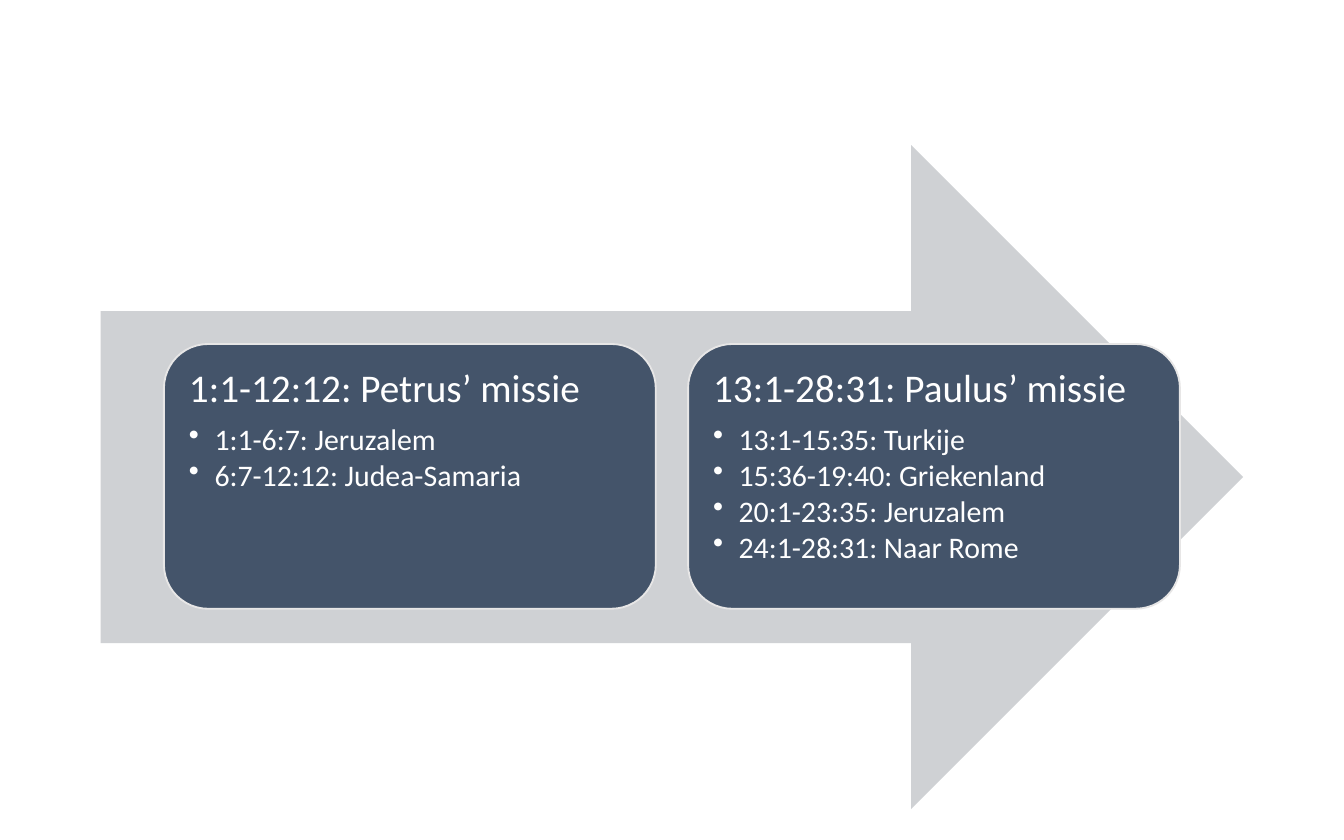
from dataclasses import dataclass

from lxml.etree import SubElement
from pptx import Presentation
from pptx.dml.color import RGBColor
from pptx.enum.shapes import MSO_SHAPE
from pptx.enum.text import MSO_ANCHOR, PP_ALIGN
from pptx.oxml.ns import qn
from pptx.shapes.autoshape import Shape
from pptx.slide import Slide
from pptx.util import Inches, Pt

GREY = RGBColor(0xCF, 0xD1, 0xD4)
NAVY = RGBColor(0x44, 0x54, 0x6A)
PALE = RGBColor(0xE7, 0xE6, 0xE6)
WHITE = RGBColor(0xFF, 0xFF, 0xFF)

LEFT, STEP = 1.22, 3.9
FRAME = {
    "word_wrap": True,
    "vertical_anchor": MSO_ANCHOR.TOP,
    "margin_left": Inches(0.09),
    "margin_right": Inches(0.09),
    "margin_top": Inches(0.09),
    "margin_bottom": Inches(0.09),
}
HEAD = {"alignment": PP_ALIGN.LEFT, "line_spacing": 0.9, "space_after": Pt(7)}
ITEM = HEAD | {"space_after": Pt(2), "level": 1}


@dataclass
class Card:
    title: str
    items: list[str]


CARDS = [
    Card("1:1-12:12: Petrus’ missie", ["1:1-6:7: Jeruzalem", "6:7-12:12: Judea-Samaria"]),
    Card(
        "13:1-28:31: Paulus’ missie",
        [
            "13:1-15:35: Turkije",
            "15:36-19:40: Griekenland",
            "20:1-23:35: Jeruzalem",
            "24:1-28:31: Naar Rome",
        ],
    ),
]


def apply(target: object, values: dict) -> None:
    """Set each named value on the target."""
    for name, value in values.items():
        setattr(target, name, value)


def add_form(slide: Slide, kind: MSO_SHAPE, box: tuple, fill: RGBColor) -> Shape:
    """Add a flat filled shape without an outline."""
    form = slide.shapes.add_shape(kind, *map(Inches, box))
    form.shadow.inherit = False
    form.fill.solid()
    form.fill.fore_color.rgb = fill
    form.line.fill.background()
    return form


def add_card(slide: Slide, card: Card, left: float) -> None:
    """Add a rounded card with a title and bullets."""
    form = add_form(slide, MSO_SHAPE.ROUNDED_RECTANGLE, (left, 2.56, 3.66, 1.97), NAVY)
    form.line.color.rgb = PALE
    form.line.width = Pt(1)
    frame = form.text_frame
    apply(frame, FRAME)
    frame.text = "\n".join([card.title, *card.items])
    for rank, para in enumerate(frame.paragraphs):
        apply(para, ITEM if rank else HEAD)
        apply(para.runs[0].font, {"name": "Calibri", "size": Pt(16 if rank else 21)})
        para.runs[0].font.color.rgb = WHITE
        if rank:
            props = para._p.get_or_add_pPr()
            props.set("marL", str(Inches(0.19)))
            props.set("indent", str(-Inches(0.19)))
            SubElement(props, qn("a:buChar")).set("char", "•")


def main() -> None:
    """Build the slide and save it."""
    deck = Presentation()
    apply(deck, {"slide_width": Inches(10), "slide_height": Inches(6.25)})
    slide = deck.slides.add_slide(deck.slide_layouts[6])
    add_form(slide, MSO_SHAPE.RIGHT_ARROW, (0.75, 1.08, 8.5, 4.94), GREY)
    for rank, card in enumerate(CARDS):
        add_card(slide, card, LEFT + rank * STEP)
    deck.save("out.pptx")


if __name__ == "__main__":
    main()
